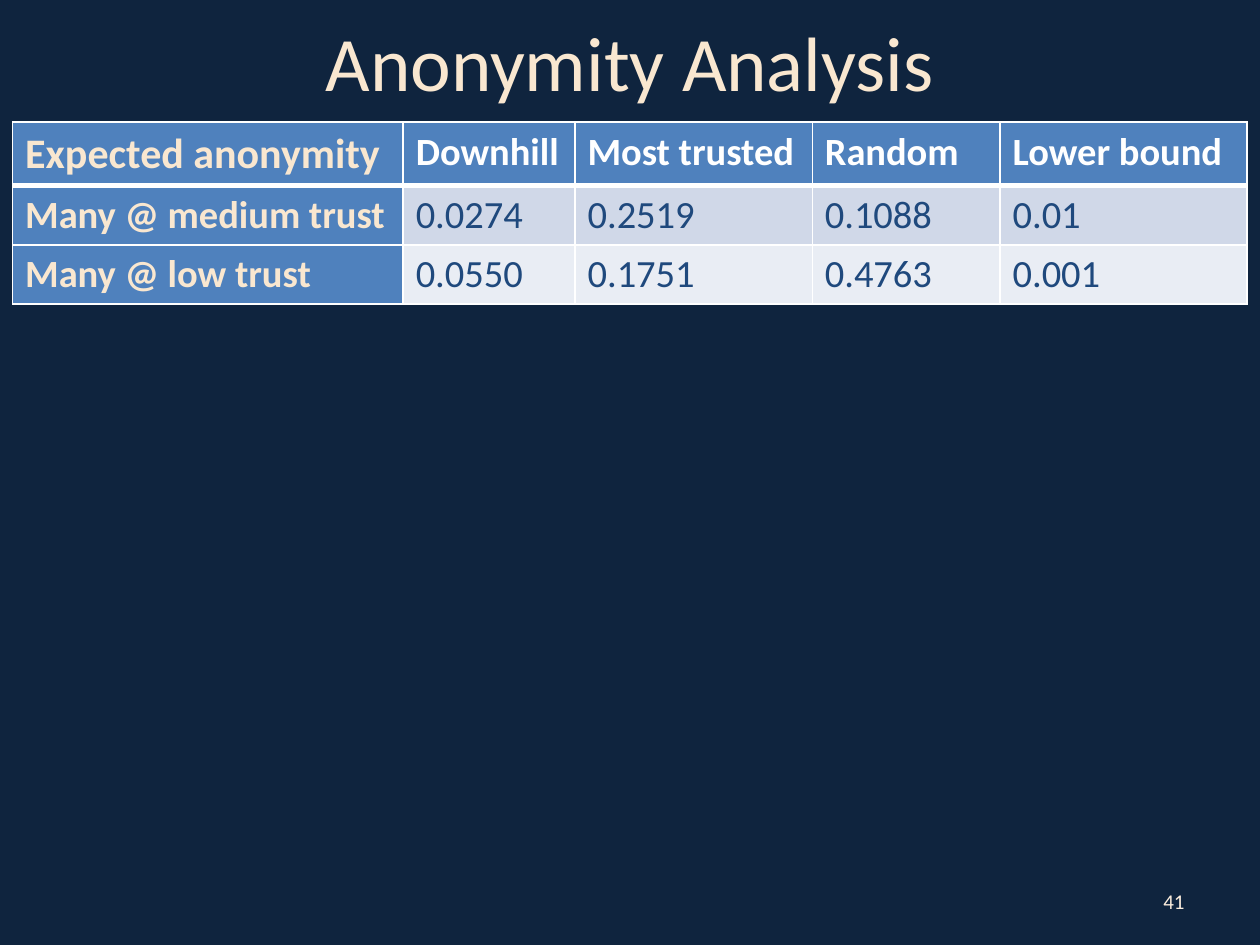
from pptx import Presentation
from pptx.dml.color import RGBColor
from pptx.enum import text
from pptx.oxml import parse_xml
from pptx.oxml.ns import nsdecls
from pptx.util import Pt

TITLE = "Anonymity Analysis"
PAGE_NUMBER = "41"
ROWS = [
    ["Expected anonymity", "Downhill", "Most trusted", "Random", "Lower bound"],
    ["Many @ medium trust", "0.0274", "0.2519", "0.1088", "0.01"],
    ["Many @ low trust", "0.0550", "0.1751", "0.4763", "0.001"],
]
COLUMN_WIDTHS = [223.2, 98.2, 135.6, 107.3, 141]
ROW_HEIGHTS = [36, 34, 34]

NAVY = RGBColor(0x0F, 0x24, 0x3E)
CREAM = RGBColor(0xF9, 0xE7, 0xD0)
PALE_CREAM = RGBColor(0xFB, 0xED, 0xDD)
WHITE = RGBColor(0xFF, 0xFF, 0xFF)
BLUE = RGBColor(0x4F, 0x81, 0xBD)
DARK_BLUE = RGBColor(0x1F, 0x49, 0x7D)
BANDS = [RGBColor(0xD0, 0xD8, 0xE8), RGBColor(0xE9, 0xED, 0xF4)]


def write(frame, words, color, align=text.PP_ALIGN.LEFT, **formats):
    para = frame.paragraphs[0]
    para.alignment = align
    span = para.add_run()
    span.text = words
    for name, value in {"name": "Calibri", **formats}.items():
        setattr(span.font, name, value)
    span.font.color.rgb = color


def place(shape, left, top, width, height):
    box = {"left": left, "top": top, "width": width, "height": height}
    for name, value in box.items():
        setattr(shape, name, Pt(value))
    shape.text_frame.word_wrap = True
    shape.text_frame.vertical_anchor = text.MSO_ANCHOR.MIDDLE


def add_border(cell, side, points):
    cell._tc.get_or_add_tcPr().append(parse_xml(
        f'<a:ln{side} {nsdecls("a")} w="{Pt(points)}"><a:solidFill>'
        f'<a:srgbClr val="{WHITE}"/></a:solidFill></a:ln{side}>'))


def format_cell(cell, row, column, words):
    is_header, is_label = row == 0, column == 0
    for side in "LRTB":
        thick = (row, side) in [(0, "B"), (1, "T")]
        add_border(cell, side, 3 if thick else 1)
    cell.fill.solid()
    cell.fill.fore_color.rgb = BLUE if is_header or is_label else BANDS[row - 1]
    color = CREAM if is_label else WHITE if is_header else DARK_BLUE
    size = Pt(24 if is_header and is_label else 22)
    write(cell.text_frame, words, color, size=size, bold=is_header or is_label)


deck = Presentation()
deck.slide_width, deck.slide_height = Pt(720), Pt(540)
page = deck.slides.add_slide(deck.slide_layouts[5])
page.background.fill.solid()
page.background.fill.fore_color.rgb = NAVY

title = page.shapes.title
place(title, 36, 0, 648, 69)
write(title.text_frame, TITLE, CREAM, text.PP_ALIGN.CENTER, size=Pt(44))

number = page.shapes.add_textbox(0, 0, 0, 0)
place(number, 516, 500.5, 168, 28.75)
write(number.text_frame, PAGE_NUMBER, PALE_CREAM, text.PP_ALIGN.RIGHT, size=Pt(12))

table = page.shapes.add_table(
    len(ROWS), len(COLUMN_WIDTHS), Pt(7.2), Pt(69.84),
    Pt(sum(COLUMN_WIDTHS)), Pt(sum(ROW_HEIGHTS))).table
table.first_col = True
for column, width in zip(table.columns, COLUMN_WIDTHS):
    column.width = Pt(width)
for row, (values, height) in enumerate(zip(ROWS, ROW_HEIGHTS)):
    table.rows[row].height = Pt(height)
    for column, words in enumerate(values):
        format_cell(table.cell(row, column), row, column, words)

deck.save("out.pptx")
